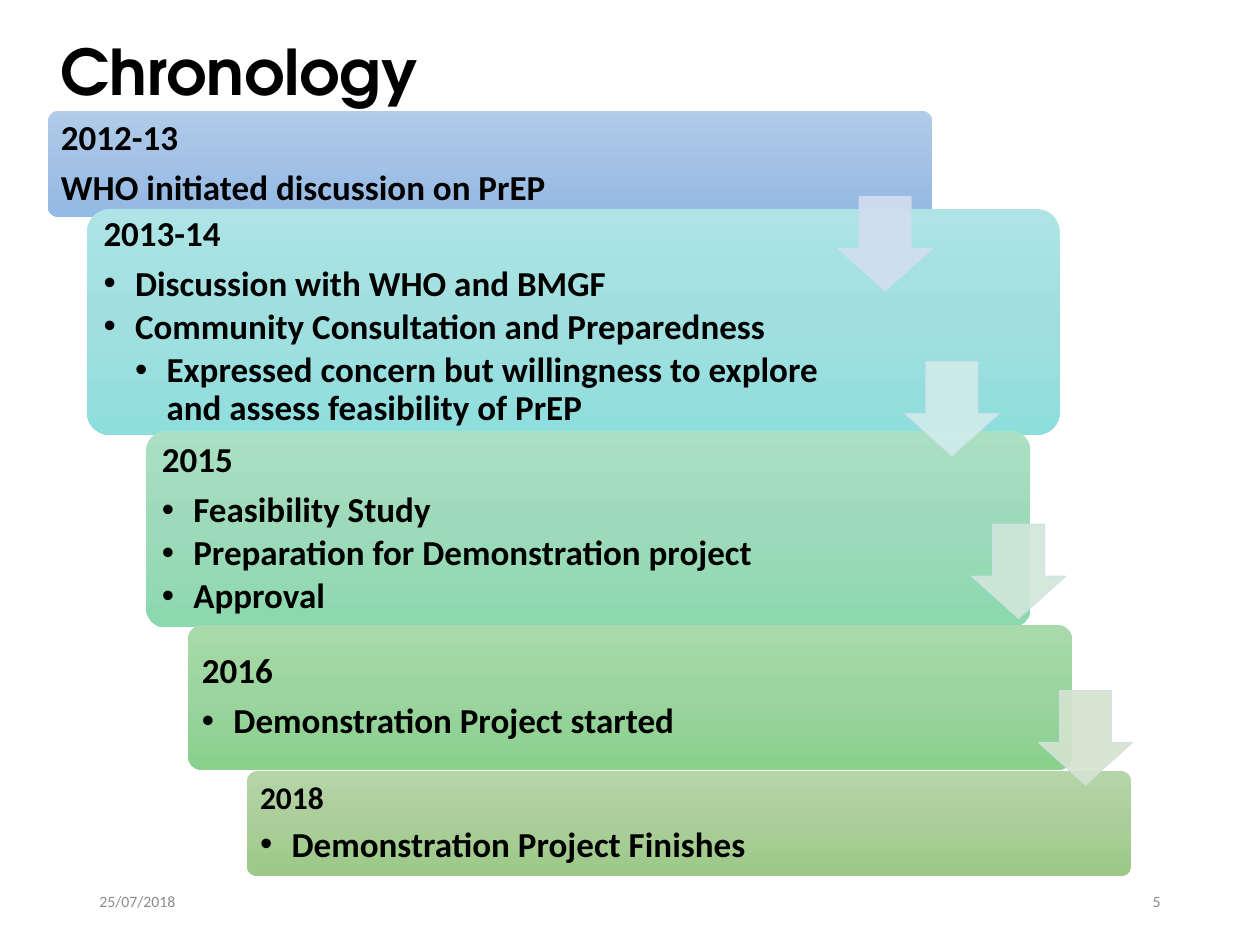
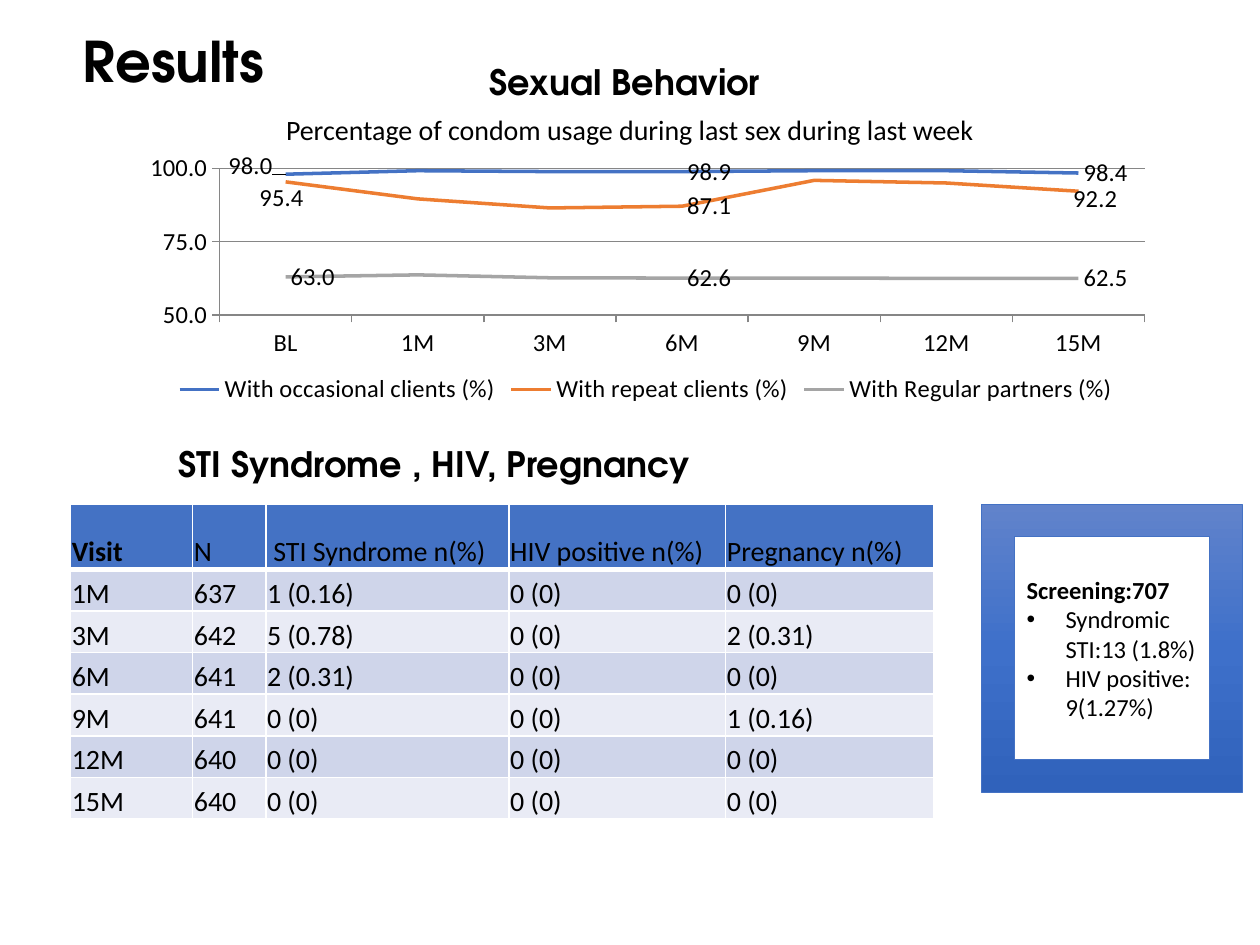
from copy import deepcopy
from dataclasses import dataclass

from lxml import etree
from pptx import Presentation
from pptx import util as u
from pptx.chart.data import CategoryChartData
from pptx.dml.color import RGBColor
from pptx.enum import chart as charts, shapes, text
from pptx.oxml import parse_xml
from pptx.oxml.ns import nsdecls, qn

COLORS = {
    "ink": "000000", "white": "FFFFFF", "muted": "8C8C8C", "grid": "868686",
    "blue": "4472C4", "orange": "ED7D31", "gray": "A5A5A5",
    "band_dark": "CFD5EA", "band_light": "E9EBF5", "arrow_line": "D2DEEF",
}
BODY_FONT, TITLE_FONT = "Calibri", "TeX Gyre Adventor"
ALIGN, ANCHOR = text.PP_ALIGN, text.MSO_ANCHOR


@dataclass(frozen=True)
class Line:
    text: str
    size: float = 20
    bold: bool = True
    font: str = BODY_FONT
    color: str = COLORS["ink"]
    align: ALIGN = ALIGN.LEFT
    level: int = 0
    indent: float = 0.25
    spacing: float = 1
    before: float = 0
    after: float = 0


@dataclass(frozen=True)
class Area:
    left: float
    top: float
    width: float
    height: float

    def lengths(self) -> tuple:
        return tuple(u.Inches(v) for v in (self.left, self.top, self.width, self.height))


@dataclass(frozen=True)
class Stage:
    area: Area
    text_width: float
    gradient: tuple
    lines: tuple


@dataclass(frozen=True)
class Arrow:
    top: float
    color: str


@dataclass(frozen=True)
class Series:
    name: str
    color: str
    values: tuple
    label_offsets: dict


# Shared helpers
def rgb(value: str) -> RGBColor:
    return RGBColor.from_string(value)


def write(frame, lines: tuple) -> None:
    for number, line in enumerate(lines):
        para = frame.add_paragraph() if number else frame.paragraphs[0]
        para.text = line.text
        if line.level:
            props = para._p.get_or_add_pPr()
            props.set("marL", str(u.Inches(line.indent * line.level)))
            props.set("indent", str(-u.Inches(line.indent)))
            props.append(parse_xml(f'<a:buFont {nsdecls("a")} typeface="Arial"/>'))
            props.append(parse_xml(f'<a:buChar {nsdecls("a")} char="•"/>'))
        para.alignment = line.align
        para.line_spacing = line.spacing
        para.space_before, para.space_after = u.Pt(line.before), u.Pt(line.after)
        para.font.name, para.font.size = line.font, u.Pt(line.size)
        para.font.bold, para.font.color.rgb = line.bold, rgb(line.color)


def add_text(page, area: Area, *lines: Line, anchor=ANCHOR.TOP, inset: float | None = None) -> None:
    frame = page.shapes.add_textbox(*area.lengths()).text_frame
    frame.word_wrap, frame.vertical_anchor = True, anchor
    if inset is not None:
        frame.margin_left = frame.margin_right = u.Inches(inset)
        frame.margin_top = frame.margin_bottom = u.Inches(inset)
    write(frame, lines)


def add_title(page, area: Area, title: str, size: float) -> None:
    add_text(page, area, Line(title, size, font=TITLE_FONT))


def add_box(page, kind, area: Area, line: str | None = None):
    box = page.shapes.add_shape(kind, *area.lengths())
    box.shadow.inherit = False
    if line:
        box.line.color.rgb, box.line.width = rgb(line), u.Pt(0.5)
    else:
        box.line.fill.background()
    return box


def shade(box, gradient: tuple) -> None:
    """Fill from top to bottom with three evenly spaced colours."""
    box.fill.gradient()
    box.fill.gradient_angle = 270
    stop_list = box._element.spPr.find(".//" + qn("a:gsLst"))
    stop_list.insert(1, deepcopy(stop_list[0]))
    for number, (stop, color) in enumerate(zip(box.fill.gradient_stops, gradient)):
        stop.position = number / 2
        stop.color.rgb = rgb(color)


def set_alpha(fill_parent, percent: int) -> None:
    color = fill_parent.find(qn("a:solidFill"))[0]
    etree.SubElement(color, qn("a:alpha")).set("val", str(percent * 1000))


# Chronology content
def year(label: str, size: float = 20) -> Line:
    return Line(label, size, spacing=0.9, after=0.35 * size)


def event(label: str, level: int = 1) -> Line:
    return Line(label, level=level, spacing=0.9, after=3)


STAGES = (
    Stage(Area(0.38, 0.88, 7.02, 0.84), 5.67, ("B1CBE9", "A3C1E5", "93B9E4"),
          (year("2012-13"), year("WHO initiated discussion on PrEP"))),
    Stage(Area(0.69, 1.66, 7.72, 1.79), 6.21, ("AEE4E5", "A0DFDF", "8FDEDE"),
          (year("2013-14"), event("Discussion with WHO and BMGF"),
           event("Community Consultation and Preparedness"),
           event("Expressed concern but willingness to explore and assess feasibility of PrEP", 2))),
    Stage(Area(1.16, 3.42, 7.02, 1.56), 5.66, ("ABE0C3", "9DDAB9", "8CD8AF"),
          (year("2015"), event("Feasibility Study"),
           event("Preparation for Demonstration project"), event("Approval"))),
    Stage(Area(1.49, 4.96, 7.02, 1.15), 5.69, ("A9DAAB", "9BD49E", "89D18C"),
          (year("2016"), event("Demonstration Project started"))),
    Stage(Area(1.96, 6.12, 7.02, 0.83), 5.7, ("B5D5A7", "AACE9A", "9CC987"),
          (year("2018", 18), event("Demonstration Project Finishes"))),
)
ARROWS = (Arrow(1.56, "D2DEEF"), Arrow(2.87, "D0ECEA"), Arrow(4.16, "D0E7D8"), Arrow(5.48, "D5E3CF"))


def add_stage(page, stage: Stage) -> None:
    area = stage.area
    panel = add_box(page, shapes.MSO_SHAPE.ROUNDED_RECTANGLE, area)
    panel.adjustments[0] = 0.1
    shade(panel, stage.gradient)
    corner = 0.029 * area.height
    inner = Area(area.left + corner, area.top + corner, stage.text_width, area.height - 2 * corner)
    add_text(page, inner, *stage.lines, anchor=ANCHOR.MIDDLE, inset=0.08)


def add_arrow(page, left: float, arrow: Arrow) -> None:
    box = add_box(page, shapes.MSO_SHAPE.DOWN_ARROW, Area(left, arrow.top, 0.75, 0.75), COLORS["arrow_line"])
    box.adjustments[0], box.adjustments[1] = 0.55, 0.45
    box.fill.solid()
    box.fill.fore_color.rgb = rgb(arrow.color)
    set_alpha(box._element.spPr, 90)
    set_alpha(box.line._ln, 90)


def build_chronology(page) -> None:
    for stage in STAGES:
        add_stage(page, stage)
    for number, arrow in enumerate(ARROWS):
        add_arrow(page, 6.65 + 0.53 * number, arrow)
    for left, label, align in ((0.69, "25/07/2018", ALIGN.LEFT), (7.06, "5", ALIGN.RIGHT)):
        add_text(page, Area(left, 6.95, 2.25, 0.4),
                 Line(label, 9, False, color=COLORS["muted"], align=align), anchor=ANCHOR.MIDDLE)
    add_title(page, Area(0.38, 0.21, 4.19, 0.71), "Chronology", 36)


# Results content
VISITS = ("BL", "1M", "3M", "6M", "9M", "12M", "15M")
LABELLED_VISITS = (0, 3, 6)
CONDOM_USE = (
    Series("With occasional clients (%)", COLORS["blue"],
           (98, 99.2, 98.9, 98.9, 99.2, 99.2, 98.4), {0: (-0.06, -0.03)}),
    Series("With repeat clients (%)", COLORS["orange"],
           (95.4, 89.6, 86.5, 87.1, 95.9, 95, 92.2), {0: (-0.03, 0.06), 6: (-0.01, 0.03)}),
    Series("With Regular partners (%)", COLORS["gray"],
           (63, 63.7, 62.7, 62.6, 62.6, 62.5, 62.5), {}),
)
COLUMN_WIDTHS = (0.97, 0.58, 1.93, 1.72, 1.65)
TABLE_ROWS = (
    ("Visit", "N", " STI Syndrome n(%)", "HIV positive n(%)", "Pregnancy n(%)"),
    ("1M", "637", "1 (0.16)", "0 (0)", "0 (0)"),
    ("3M", "642", "5 (0.78)", "0 (0)", "2 (0.31)"),
    ("6M", "641", "2 (0.31)", "0 (0)", "0 (0)"),
    ("9M", "641", "0 (0)", "0 (0)", "1 (0.16)"),
    ("12M", "640", "0 (0)", "0 (0)", "0 (0)"),
    ("15M", "640", "0 (0)", "0 (0)", "0 (0)"),
)


def label_xml(point: int, offset: tuple | None):
    if offset is None:
        content = '<c:delete val="1"/>'
    else:
        flags = "".join(f'<c:show{name} val="{int(name == "Val")}"/>' for name in
                        ("LegendKey", "Val", "CatName", "SerName", "Percent", "BubbleSize"))
        content = (f'<c:layout><c:manualLayout><c:x val="{offset[0]}"/><c:y val="{offset[1]}"/>'
                   '</c:manualLayout></c:layout><c:numFmt formatCode="0.0" sourceLinked="0"/>'
                   f'<c:dLblPos val="r"/>{flags}')
    return parse_xml(f'<c:dLbl {nsdecls("c")}><c:idx val="{point}"/>{content}</c:dLbl>')


def style_series(plotted, series: Series) -> None:
    plotted.smooth = False
    plotted.format.line.color.rgb = rgb(series.color)
    plotted.format.line.width = u.Pt(2)
    labels = plotted.data_labels
    labels.show_value = True
    labels.number_format, labels.number_format_is_linked = "0.0", False
    labels.position = charts.XL_LABEL_POSITION.RIGHT
    special = dict.fromkeys(p for p in range(len(VISITS)) if p not in LABELLED_VISITS)
    special |= series.label_offsets
    for place, point in enumerate(sorted(special)):
        labels._element.insert(place, label_xml(point, special[point]))


def place_plot(chart, box: tuple) -> None:
    plot_area = chart._chartSpace.chart.plotArea
    for layout in plot_area.findall(qn("c:layout")):
        plot_area.remove(layout)
    sizes = "".join(f'<c:{name} val="{value}"/>' for name, value in zip("xywh", box))
    plot_area.insert(0, parse_xml(
        f'<c:layout {nsdecls("c")}><c:manualLayout><c:layoutTarget val="inner"/>'
        f'<c:xMode val="edge"/><c:yMode val="edge"/>{sizes}</c:manualLayout></c:layout>'))


def add_condom_chart(page) -> None:
    data = CategoryChartData(number_format="0.0")
    data.categories = VISITS
    for series in CONDOM_USE:
        data.add_series(series.name, series.values)
    area = Area(1, 1.17, 8.25, 2.08)
    chart = page.shapes.add_chart(charts.XL_CHART_TYPE.LINE, *area.lengths(), data).chart
    chart.font.name, chart.font.size = BODY_FONT, u.Pt(14)
    chart.font.color.rgb = rgb(COLORS["ink"])
    chart.has_title = False
    chart.has_legend = True
    chart.legend.position = charts.XL_LEGEND_POSITION.BOTTOM
    chart.legend.include_in_layout = False
    chart.plots[0].vary_by_categories = False
    scale = chart.value_axis
    scale.minimum_scale, scale.maximum_scale, scale.major_unit = 50, 100, 25
    scale.has_major_gridlines = True
    scale.tick_labels.number_format, scale.tick_labels.number_format_is_linked = "0.0", False
    for rule in (scale, scale.major_gridlines, chart.category_axis):
        rule.format.line.color.rgb = rgb(COLORS["grid"])
        rule.format.line.width = u.Pt(0.75)
    for axis in (scale, chart.category_axis):
        axis.major_tick_mark = charts.XL_TICK_MARK.OUTSIDE
    for plotted, series in zip(chart.plots[0].series, CONDOM_USE):
        style_series(plotted, series)
    place_plot(chart, (0.09, 0.08, 0.89, 0.56))


def set_borders(cell, bottom: float) -> None:
    props = cell._tc.get_or_add_tcPr()
    for place, (side, width) in enumerate((("L", 1), ("R", 1), ("T", 1), ("B", bottom))):
        props.insert(place, parse_xml(
            f'<a:ln{side} {nsdecls("a")} w="{u.Pt(width)}"><a:solidFill>'
            f'<a:srgbClr val="{COLORS["white"]}"/></a:solidFill></a:ln{side}>'))


def add_visit_table(page) -> None:
    area = Area(0.56, 4, 6.85, 2.49)
    table = page.shapes.add_table(len(TABLE_ROWS), len(COLUMN_WIDTHS), *area.lengths()).table
    table.first_row = table.horz_banding = False
    for column, width in zip(table.columns, COLUMN_WIDTHS):
        column.width = u.Inches(width)
    for row, values in enumerate(TABLE_ROWS):
        table.rows[row].height = u.Inches(0.33 if row else 0.52)
        band = COLORS["band_dark" if row % 2 else "band_light"] if row else COLORS["blue"]
        for column, value in enumerate(values):
            cell = table.cell(row, column)
            cell.margin_left = cell.margin_right = cell.margin_top = u.Inches(0.01)
            cell.margin_bottom = 0
            cell.vertical_anchor = ANCHOR.BOTTOM
            cell.fill.solid()
            cell.fill.fore_color.rgb = rgb(band)
            set_borders(cell, 1 if row else 3)
            write(cell.text_frame, (Line(value, 16, bold=row == column == 0),))


def add_screening_frame(page) -> None:
    box = add_box(page, shapes.MSO_SHAPE.FRAME, Area(7.79, 4, 2.07, 2.29), COLORS["blue"])
    shade(box, ("6183CB", "3E70CA", "3062BB"))
    box.text_frame.word_wrap, box.text_frame.vertical_anchor = True, ANCHOR.MIDDLE
    findings = ("Syndromic STI:13 (1.8%)", "HIV positive: 9(1.27%)")
    write(box.text_frame, (Line("Screening:707", 14),
                           *(Line(item, 14, False, level=1, indent=0.31) for item in findings)))


def build_results(page) -> None:
    add_text(page, Area(0.5, 0.47, 9, 0.75),
             Line("Sexual Behavior ", font=TITLE_FONT, align=ALIGN.CENTER, spacing=0.9),
             Line("Percentage of condom usage during last sex during last week", 16, False,
                  align=ALIGN.CENTER, spacing=0.9, before=7.5))
    add_text(page, Area(1.32, 3.5, 5, 0.4),
             Line("STI Syndrome , HIV, Pregnancy", font=TITLE_FONT, spacing=0.9))
    add_condom_chart(page)
    add_visit_table(page)
    add_title(page, Area(0.56, 0.16, 1.93, 0.64), "Results", 32)
    add_screening_frame(page)


def main() -> None:
    deck = Presentation()
    deck.slide_width, deck.slide_height = u.Inches(10), u.Inches(7.5)
    for build in (build_chronology, build_results):
        build(deck.slides.add_slide(deck.slide_layouts[6]))
    deck.save("out.pptx")


if __name__ == "__main__":
    main()
